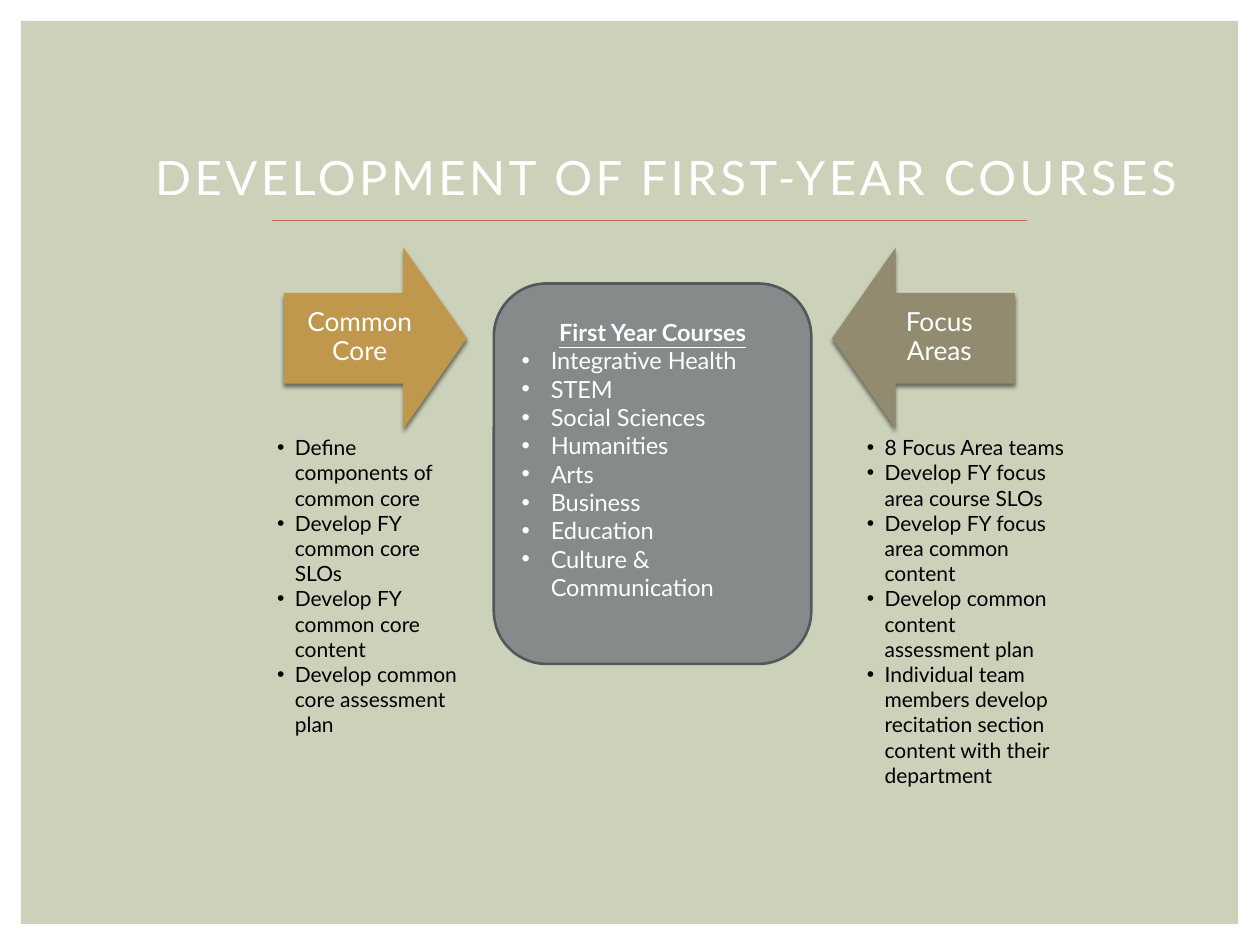
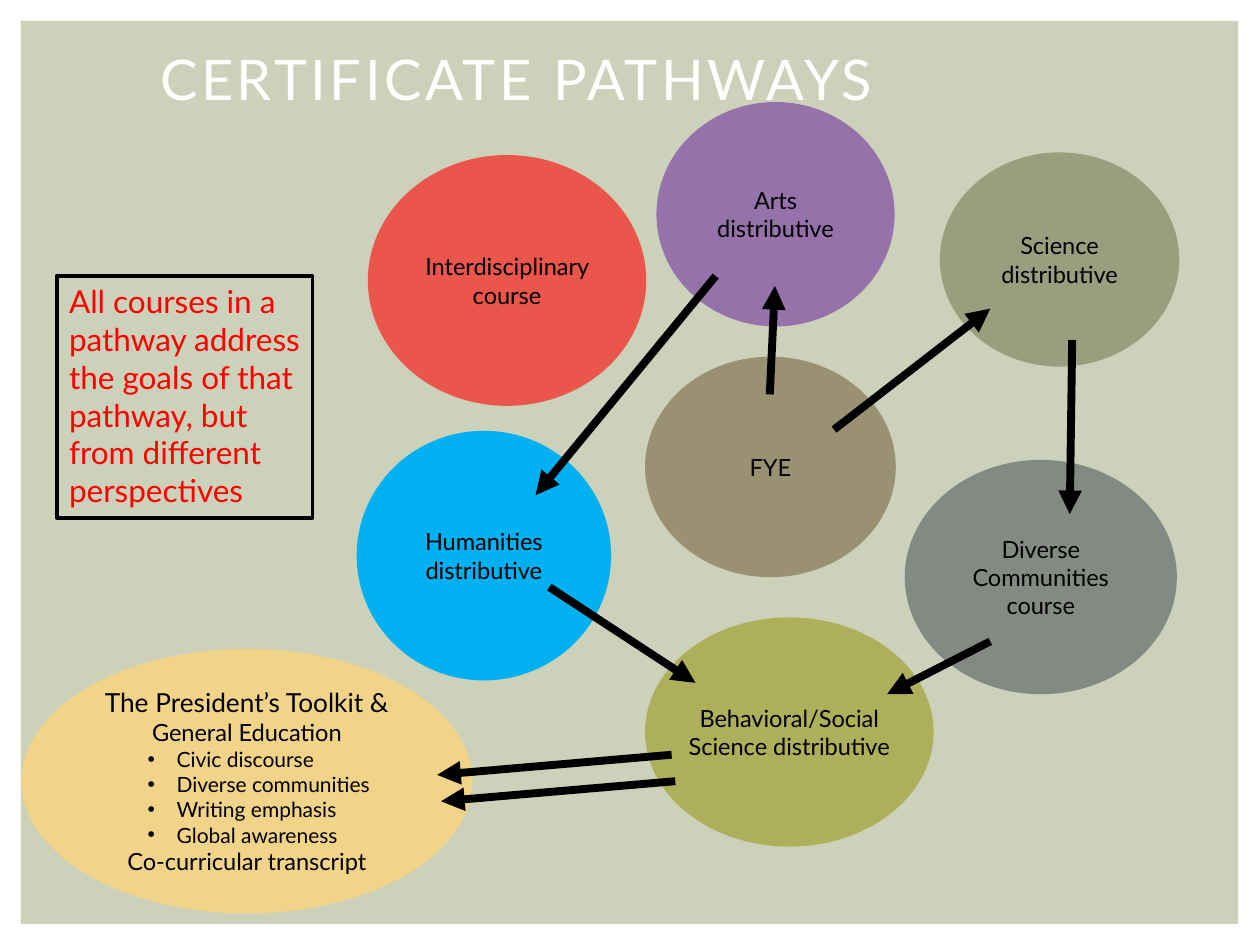
"""Build two slides on first-year courses and certificate pathways."""
from dataclasses import dataclass

from lxml import etree
from pptx import Presentation
from pptx import util as u
from pptx.dml import color as dml
from pptx.enum import shapes, text
from pptx.oxml import ns

Pt = u.Pt
Kind = shapes.MSO_SHAPE
CENTER, LEFT = text.PP_ALIGN.CENTER, text.PP_ALIGN.LEFT
MIDDLE, TOP = text.MSO_ANCHOR.MIDDLE, text.MSO_ANCHOR.TOP
TWO_CONTENT, TITLE_ONLY = 3, 5


@dataclass(frozen=True)
class Theme:
    font: str = "Lato"
    band: str = "CCD1B9"
    white: str = "FFFFFF"
    black: str = "000000"
    rule: str = "C66951"
    common_core: str = "BF974D"
    focus_areas: str = "928B70"
    courses: str = "6F777D"
    courses_edge: str = "52585C"
    science: str = "6E774E"
    fye: str = "634C23"
    arts: str = "7030A0"
    toolkit: str = "FFD579"
    diverse: str = "53595E"
    humanities: str = "00B0F0"
    interdisciplinary: str = "FF0000"
    behavioral: str = "929000"
    note: str = "FF0000"
    long_title_size: float = 27
    title_size: float = 32
    note_size: float = 18
    label_size: float = 15
    body_size: float = 13.5
    list_size: float = 12


def rgb(value):
    return dml.RGBColor.from_string(value)


def assign(target, values):
    for name, value in values.items():
        setattr(target, name, value)


def add_xml(parent, tag, **attributes):
    child = etree.SubElement(parent, ns.qn(tag))
    for name, value in attributes.items():
        child.set(name, str(value))
    return child


class Deck:
    def __init__(self, theme):
        self.theme = theme
        self.deck = Presentation()
        assign(self.deck, {"slide_width": Pt(720), "slide_height": Pt(540)})
        self.slide = None

    def start_slide(self, layout):
        first = self.slide is None
        self.slide = self.deck.slides.add_slide(self.deck.slide_layouts[layout])
        if first:
            self.add_band_to_master()

    def add_band_to_master(self):
        band = self.shape(Kind.RECTANGLE, (12, 12, 695.5, 516), self.theme.band).element
        band.nvSpPr.cNvPr.set("id", "99")
        self.deck.slide_master.shapes.element.insert(2, band)

    def place(self, target, box):
        assign(target, dict(zip(("left", "top", "width", "height"), map(Pt, box))))

    def fill_text(self, frame, lines, anchor=TOP, inset=(7.2, 3.6, 7.2, 3.6), **shared):
        assign(frame, {"word_wrap": True, "auto_size": text.MSO_AUTO_SIZE.NONE,
                       "vertical_anchor": anchor})
        sides = ("margin_left", "margin_top", "margin_right", "margin_bottom")
        assign(frame, dict(zip(sides, map(Pt, inset))))
        for index, line in enumerate(lines):
            words, own = line if isinstance(line, tuple) else (line, {})
            style = {"size": self.theme.body_size, "color": self.theme.black, **shared, **own}
            paragraph = frame.add_paragraph() if index else frame.paragraphs[0]
            assign(paragraph, {"alignment": style.get("align", LEFT), "space_before": Pt(0),
                               "line_spacing": style.get("spacing", 1.0)})
            run = paragraph.add_run()
            run.text = words
            assign(run.font, {"name": self.theme.font, "size": Pt(style["size"]),
                              "bold": style.get("bold", False),
                              "underline": style.get("underline", False)})
            run.font.color.rgb = rgb(style["color"])
            if "tracking" in style:
                run.font._element.set("spc", str(style["tracking"]))
            if "bullet" in style:
                self.bullet(paragraph, *style["bullet"])

    def bullet(self, paragraph, left, hanging):
        properties = paragraph._p.get_or_add_pPr()
        properties.set("marL", str(Pt(left)))
        properties.set("indent", str(-Pt(hanging)))
        add_xml(properties, "a:buFont", typeface="Arial")
        add_xml(properties, "a:buChar", char="•")

    def title(self, words, box, size):
        heading = self.slide.shapes.title
        self.place(heading, box)
        self.fill_text(heading.text_frame, [words], MIDDLE, size=size, align=CENTER,
                       color=self.theme.white, tracking=200)
        self.slide.shapes.element.append(heading.element)

    def bullets(self, index, items, box):
        body = self.slide.placeholders[index]
        self.place(body, box)
        self.fill_text(body.text_frame, items, size=self.theme.list_size, bullet=(10.1, 10.1))

    def shape(self, kind, box, fill=None, opacity=100, edge=None, edge_width=1):
        item = self.slide.shapes.add_shape(kind, *map(Pt, box))
        item.shadow.inherit = False
        if fill:
            item.fill.solid()
            item.fill.fore_color.rgb = rgb(fill)
            if opacity < 100:
                shade = item.element.spPr.find(".//" + ns.qn("a:srgbClr"))
                add_xml(shade, "a:alpha", val=opacity * 1000)
        else:
            item.fill.background()
        if edge:
            item.line.color.rgb = rgb(edge)
            item.line.width = Pt(edge_width)
        else:
            item.line.fill.background()
        return item

    def label(self, words, box):
        caption = self.slide.shapes.add_textbox(*map(Pt, box))
        self.fill_text(caption.text_frame, [words], MIDDLE, (8.6,) * 4, align=CENTER,
                       size=self.theme.label_size, color=self.theme.white, spacing=0.9)

    def block_arrow(self, words, left, label_left, rotation, fill):
        arrow = self.shape(Kind.DOWN_ARROW, (left, 141.1, 103.7, 104.4), fill)
        arrow.rotation = rotation
        arrow.adjustments[0], arrow.adjustments[1] = 0.5, 0.35
        effects = arrow.element.spPr.find(ns.qn("a:effectLst"))
        shadow = add_xml(effects, "a:outerShdw", blurRad=Pt(2.5), dist=Pt(2),
                         dir=5400000, rotWithShape=0)
        shade = add_xml(shadow, "a:srgbClr", val=self.theme.black)
        add_xml(shade, "a:alpha", val=50000)
        self.label(words, (label_left, 167, 85.7, 51.8))

    def ellipse(self, lines, box, fill, opacity=100, **style):
        oval = self.shape(Kind.OVAL, box, fill, opacity)
        self.fill_text(oval.text_frame, lines, MIDDLE, align=CENTER, **style)

    def line(self, ends, color, width, arrow=False):
        link = self.slide.shapes.add_connector(shapes.MSO_CONNECTOR.STRAIGHT, *map(Pt, ends))
        link.line.color.rgb = rgb(color)
        link.line.width = Pt(width)
        if arrow:
            add_xml(link.element.spPr.find(ns.qn("a:ln")), "a:tailEnd", type="triangle")
        add_xml(link.element.spPr, "a:effectLst")


def build_first_year_courses(deck):
    theme = deck.theme
    deck.start_slide(TWO_CONTENT)
    deck.title("DEVELOPMENT OF FIRST-YEAR COURSES ", (50.4, 71.3, 669.6, 59),
               theme.long_title_size)
    deck.line((155.5, 126, 586.8, 126), theme.rule, 0.79)
    deck.block_arrow("Common Core", 162.7, 162.7, 270, theme.common_core)
    deck.block_arrow("Focus Areas", 475.9, 493.9, 90, theme.focus_areas)

    courses = ["Integrative Health", "STEM", "Social Sciences", "Humanities", "Arts",
               "Business", "Education", "Culture & Communication"]
    heading = ("First Year Courses", {"bold": True, "underline": True, "align": CENTER})
    panel = deck.shape(Kind.ROUNDED_RECTANGLE, (282.2, 162, 181.4, 217.4), theme.courses, 77,
                       theme.courses_edge, 1.5)
    deck.fill_text(panel.text_frame,
                   [heading] + [(course, {"bullet": (16.6, 16.6)}) for course in courses],
                   MIDDLE, (7.2, 3.6, 7.2, 19.8), color=theme.white)

    deck.bullets(1, ["Define components of common core",
                     "Develop FY common core SLOs",
                     "Develop FY common core content",
                     "Develop common core assessment plan"], (151.2, 244.8, 119.5, 193))
    deck.bullets(2, ["8 Focus Area teams",
                     "Develop FY focus area course SLOs",
                     "Develop FY focus area common content",
                     "Develop common content assessment plan",
                     "Individual team members develop recitation section content "
                     "with their department"], (488.2, 244.8, 127.4, 232.6))


def build_certificate_pathways(deck):
    theme = deck.theme
    deck.start_slide(TITLE_ONLY)
    emphases = ["Civic discourse", "Diverse communities", "Writing emphasis",
                "Global awareness"]
    emphasis_style = {"size": theme.list_size, "align": LEFT, "bullet": (43.9, 16.6)}
    toolkit = [("The President’s Toolkit &", {"size": theme.label_size}), "General Education",
               *((emphasis, emphasis_style) for emphasis in emphases),
               "Co-curricular transcript"]
    courses = [
        (["Science distributive"], (537.1, 87.1, 136.8, 122.4), theme.science, 55),
        (["FYE"], (368.6, 203.8, 143.3, 126), theme.fye, 48),
        (["Arts distributive"], (375.1, 58.3, 136.1, 128.2), theme.arts, 59),
        (toolkit, (12.2, 370.8, 257.8, 151.2), theme.toolkit, 73),
        (["Diverse Communities course"], (517, 262.8, 155.5, 133.9), theme.diverse, 59),
        (["Humanities distributive"], (203.8, 246.2, 145.4, 142.6), theme.humanities, 100),
        (["Interdisciplinary course"], (210.2, 88.6, 159.1, 143.3),
         theme.interdisciplinary, 59),
    ]
    for course in courses:
        deck.ellipse(*course)
    deck.ellipse(["Behavioral/Social Science distributive"], (368.6, 352.8, 164.9, 131),
                 theme.behavioral, 51, inset=(0,) * 4)
    deck.title("CERTIFICATE PATHWAYS", (30.2, 15.1, 529.9, 59), theme.title_size)

    steps = [
        (439.9, 225.4, 442.8, 163.4),
        (409, 157.7, 306, 283),
        (313.9, 335.5, 397.4, 390.2),
        (383.8, 431.3, 249.8, 442.8),
        (476.6, 245.5, 565.9, 176.4),
        (612.7, 194.4, 611.3, 293.8),
        (565.9, 366.5, 506.9, 396.7),
        (385.9, 446.4, 252, 457.9),
    ]
    for step in steps:
        deck.line(step, theme.black, 4.5, arrow=True)

    note = deck.shape(Kind.RECTANGLE, (32.4, 157.7, 146.2, 138.2),
                      edge=theme.black, edge_width=2.25)
    deck.fill_text(note.text_frame,
                   ["All courses in a pathway address the goals of that pathway, "
                    "but from different perspectives"], size=theme.note_size, color=theme.note)


def main():
    deck = Deck(Theme())
    build_first_year_courses(deck)
    build_certificate_pathways(deck)
    deck.deck.save("out.pptx")


if __name__ == "__main__":
    main()
